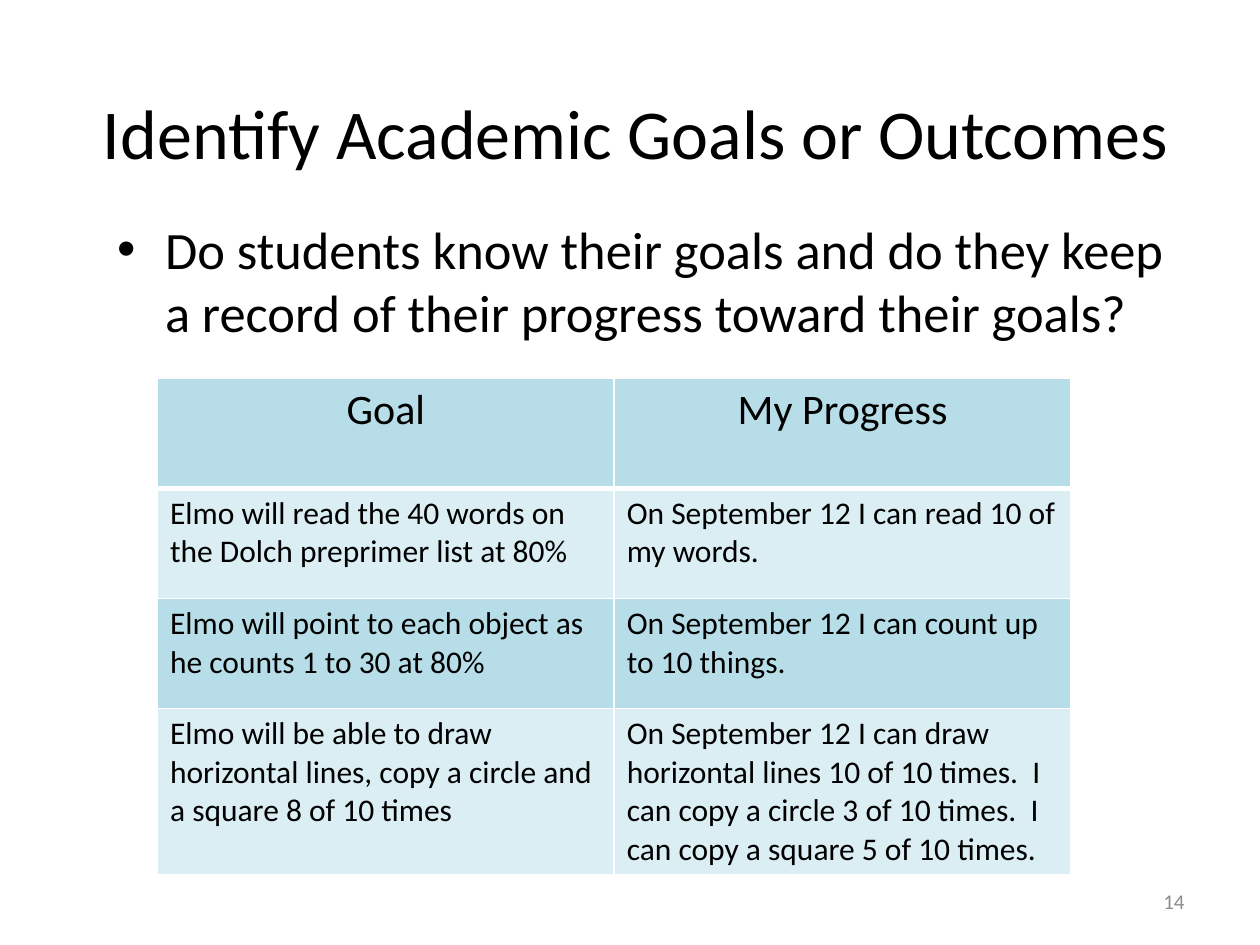
from lxml.etree import SubElement
from pptx import Presentation
from pptx.dml.color import RGBColor
from pptx.enum.text import MSO_ANCHOR as Anchor, PP_ALIGN as Align
from pptx.oxml.ns import qn
from pptx.util import Inches, Pt


def add_text(paragraph, text, size, color="000000", align=Align.LEFT):
    paragraph.alignment = align
    paragraph.space_before = Pt(0)
    run = paragraph.add_run()
    run.text = text
    run.font.name = "Calibri"
    run.font.size = Pt(size)
    run.font.bold = False
    run.font.color.rgb = RGBColor.from_string(color)


def set_borders(cell, widths, color="FFFFFF"):
    properties = cell._tc.get_or_add_tcPr()
    for position, (side, width) in enumerate(widths.items()):
        line = properties.makeelement(qn(f"a:{side}"), {"w": str(Pt(width))})
        fill = SubElement(line, qn("a:solidFill"))
        SubElement(fill, qn("a:srgbClr"), val=color)
        properties.insert(position, line)


presentation = Presentation()
presentation.slide_width = Inches(10)
presentation.slide_height = Inches(7.5)
slide = presentation.slides.add_slide(presentation.slide_layouts[1])

# Title
title, body = slide.placeholders
title.left, title.top = Inches(0.67), Inches(0.42)
title.width, title.height = Inches(8.75), Inches(1.25)
title.text_frame.vertical_anchor = Anchor.MIDDLE
add_text(title.text_frame.paragraphs[0], "Identify Academic Goals or Outcomes", 40,
         align=Align.CENTER)

# Bulleted question
body.left, body.top = Inches(0.83), Inches(1.67)
body.width, body.height = Inches(8.58), Inches(4.5)
question = body.text_frame.paragraphs[0]
properties = question._p.get_or_add_pPr()
properties.set("marL", str(Inches(0.38)))
properties.set("indent", str(-Inches(0.38)))
SubElement(properties, qn("a:buFont"), typeface="Arial")
SubElement(properties, qn("a:buChar"), char="•")
add_text(question, "Do students know their goals and do they keep a record of "
         "their progress toward their goals?", 30)

# Goals and progress table
rows = [
    ("Goal", "My Progress"),
    ("Elmo will read the 40 words on the Dolch preprimer list at 80%",
     "On September 12 I can read 10 of my words."),
    ("Elmo will point to each object as he counts 1 to 30 at 80%",
     "On September 12 I can count up to 10 things."),
    ("Elmo will be able to draw horizontal lines, copy a circle and a square 8 of 10 times",
     "On September 12 I can draw horizontal lines 10 of 10 times.  I can copy a circle "
     "3 of 10 times.  I can copy a square 5 of 10 times."),
]
row_height = Inches(7 / 8)
last_row_height = Inches(1.31)
table = slide.shapes.add_table(
    len(rows), 2, Inches(1.25), Inches(3), Inches(7.25),
    row_height * 3 + last_row_height).table
for row_index, texts in enumerate(rows):
    is_header = row_index == 0
    is_last = row_index == len(rows) - 1
    table.rows[row_index].height = last_row_height if is_last else row_height
    for column_index, text in enumerate(texts):
        cell = table.cell(row_index, column_index)
        cell.fill.solid()
        cell.fill.fore_color.rgb = RGBColor.from_string(("B7DEE8", "DBEEF4")[row_index % 2])
        set_borders(cell, {"lnL": 1, "lnR": 1, "lnT": 1, "lnB": 3 if is_header else 1})
        add_text(cell.text_frame.paragraphs[0], text, 24 if is_header else 18,
                 align=Align.CENTER if is_header else Align.LEFT)

# Slide number
number = slide.shapes.add_textbox(Inches(7.17), Inches(6.95), Inches(2.33), Inches(0.4))
number.text_frame.word_wrap = True
number.text_frame.vertical_anchor = Anchor.MIDDLE
add_text(number.text_frame.paragraphs[0], "14", 12, "8C8C8C", Align.RIGHT)

presentation.save("out.pptx")
